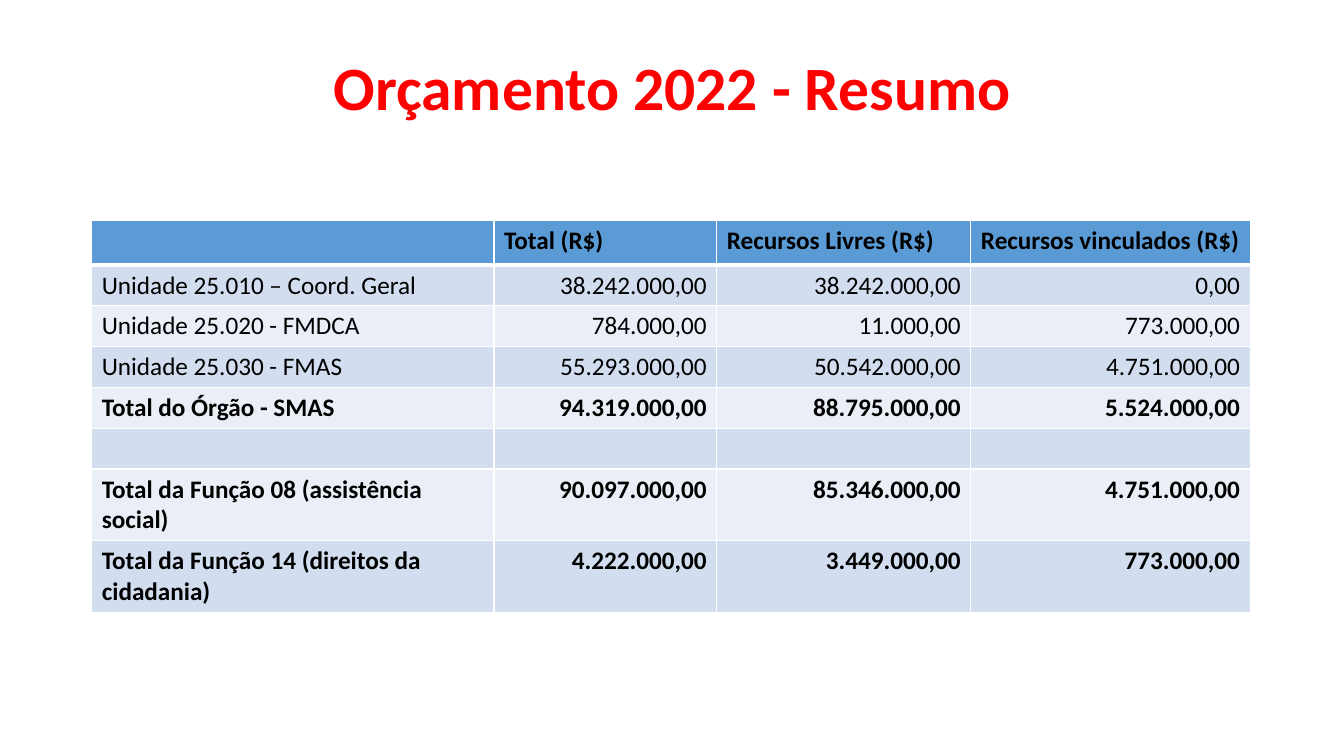
from dataclasses import dataclass
from lxml.etree import SubElement
from pptx import Presentation
from pptx.dml.color import RGBColor as Rgb
from pptx.enum.text import MSO_ANCHOR as Anchor, PP_ALIGN as Align
from pptx.oxml.ns import qn
from pptx.util import Inches, Pt

# Content: label, total, free funds, earmarked funds
TITLE = "Orçamento 2022 - Resumo"
HEAD = ("", "Total (R$)", "Recursos Livres (R$)", "Recursos vinculados (R$)")
UNITS = [
    ("Unidade 25.010 – Coord. Geral", "38.242.000,00", "38.242.000,00", "0,00"),
    ("Unidade 25.020 - FMDCA", "784.000,00", "11.000,00", "773.000,00"),
    ("Unidade 25.030 - FMAS", "55.293.000,00", "50.542.000,00", "4.751.000,00"),
]
TOTALS = [
    ("Total do Órgão - SMAS", "94.319.000,00", "88.795.000,00", "5.524.000,00"),
    ("", "", "", ""),
    ("Total da Função 08 (assistência social)",
     "90.097.000,00", "85.346.000,00", "4.751.000,00"),
    ("Total da Função 14 (direitos da cidadania)",
     "4.222.000,00", "3.449.000,00", "773.000,00"),
]
ROWS = [HEAD, *UNITS, *TOTALS]

# Grid, in inches
WIDE, HIGH = 13.33, 7.5
LEFT, TOP = 0.91, 2.19
COLS = (3.99, 2.21, 2.52, 2.77)
HEAD_H, ROW_H, TALL_H = 0.44, 0.405, 0.71


@dataclass(frozen=True)
class Theme:
    font: str = "Calibri"
    title: str = "FF0000"
    ink: str = "000000"
    head: str = "5B9BD5"
    bands: tuple = ("EAEFF7", "D2DEEF")
    rule: str = "FFFFFF"
    big: int = 44
    body: int = 18
    thin: int = 1
    thick: int = 3


LOOK = Theme()


def style(para, size, color, bold, align):
    para.alignment = align
    for face in [para.font, *(run.font for run in para.runs)]:
        face.name, face.size, face.bold = LOOK.font, Pt(size), bold
        face.color.rgb = Rgb.from_string(color)


def edge(cell, side, width):
    line = SubElement(cell._tc.get_or_add_tcPr(), qn(f"a:ln{side}"),
                      w=str(Pt(width)))
    fill = SubElement(line, qn("a:solidFill"))
    SubElement(fill, qn("a:srgbClr"), val=LOOK.rule)


def fill_cell(cell, text, row, col):
    # Borders come before the fill; the header rule is thick on both sides
    above, below = (LOOK.thick if row == n else LOOK.thin for n in (1, 0))
    for side, width in zip("LRTB", (LOOK.thin, LOOK.thin, above, below)):
        edge(cell, side, width)
    cell.fill.solid()
    color = LOOK.bands[row % 2] if row else LOOK.head
    cell.fill.fore_color.rgb = Rgb.from_string(color)
    cell.text_frame.text = text
    bold = row == 0 or row > len(UNITS)
    align = Align.RIGHT if row and col else Align.LEFT
    style(cell.text_frame.paragraphs[0], LOOK.body, LOOK.ink, bold, align)


def add_title(slide):
    box = slide.shapes.add_textbox(*map(Inches, (0.92, 0.17, 11.5, 1.45)))
    frame = box.text_frame
    frame.word_wrap = True
    frame.vertical_anchor = Anchor.MIDDLE
    frame.text = TITLE
    para = frame.paragraphs[0]
    para.line_spacing = 0.9
    style(para, LOOK.big, LOOK.title, True, Align.CENTER)


def add_budget(slide):
    # Labels that wrap to two lines need the tall row
    highs = [HEAD_H] + [TALL_H if len(row[0]) > 30 else ROW_H
                        for row in ROWS[1:]]
    size = (LEFT, TOP, sum(COLS), sum(highs))
    table = slide.shapes.add_table(len(ROWS), len(COLS),
                                   *map(Inches, size)).table
    for col, width in zip(table.columns, COLS):
        col.width = Inches(width)
    for row, high in zip(table.rows, highs):
        row.height = Inches(high)
    for r, row in enumerate(ROWS):
        for c, text in enumerate(row):
            fill_cell(table.cell(r, c), text, r, c)


def main():
    deck = Presentation()
    deck.slide_width, deck.slide_height = Inches(WIDE), Inches(HIGH)
    slide = deck.slides.add_slide(deck.slide_layouts[6])
    add_title(slide)
    add_budget(slide)
    deck.save("out.pptx")


if __name__ == "__main__":
    main()
